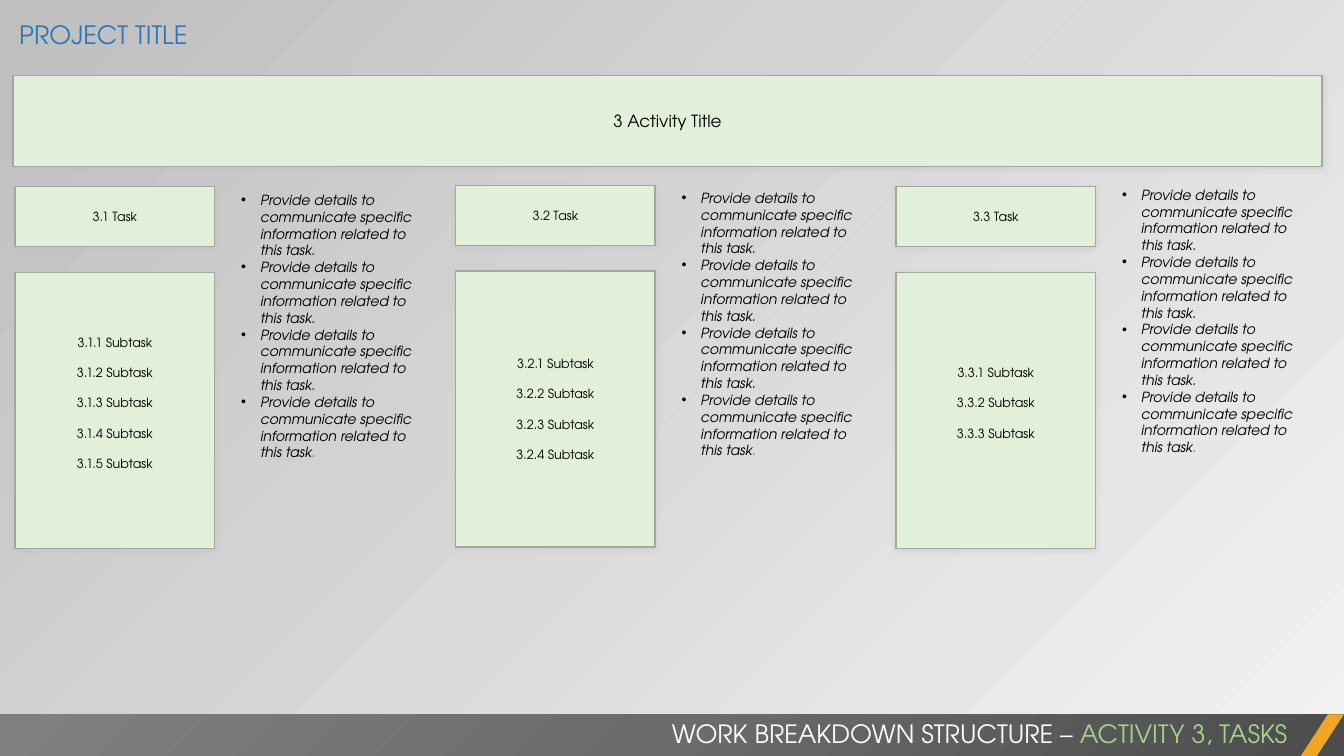
"""Build the work breakdown slide for the tasks of activity 3."""
from lxml import etree
from pptx import Presentation
from pptx.dml.color import RGBColor
from pptx.enum.shapes import MSO_SHAPE
from pptx.enum.text import MSO_ANCHOR, MSO_AUTO_SIZE, PP_ALIGN
from pptx.oxml import parse_xml
from pptx.oxml.ns import qn
from pptx.util import Cm, Pt

RECTANGLE, PARALLELOGRAM = MSO_SHAPE.RECTANGLE, MSO_SHAPE.PARALLELOGRAM
LEFT, CENTER, RIGHT = PP_ALIGN.LEFT, PP_ALIGN.CENTER, PP_ALIGN.RIGHT
TOP, MIDDLE = MSO_ANCHOR.TOP, MSO_ANCHOR.MIDDLE
GROW = MSO_AUTO_SIZE.SHAPE_TO_FIT_TEXT

BLACK = RGBColor(0x00, 0x00, 0x00)
WHITE = RGBColor(0xFF, 0xFF, 0xFF)
BLUE = RGBColor(0x2E, 0x75, 0xB6)
GREEN = RGBColor(0xA9, 0xD1, 0x8E)
PALE_GREEN = RGBColor(0xE2, 0xF0, 0xD9)
GRAY = RGBColor(0xA5, 0xA5, 0xA5)
AMBER = RGBColor(0xF0, 0xA6, 0x22)
LIGHT = RGBColor(0xF2, 0xF2, 0xF2)
SILVER = RGBColor(0xBF, 0xBF, 0xBF)
BAND_STOPS = [
    (0, RGBColor(0x4C, 0x4C, 0x4C)),
    (50, RGBColor(0x6B, 0x6B, 0x6B)),
    (100, RGBColor(0x80, 0x80, 0x80)),
]

DRAWING_NS = 'xmlns:a="http://schemas.openxmlformats.org/drawingml/2006/main"'
SHADOW = (
    f'<a:outerShdw {DRAWING_NS} blurRad="50800" dist="12700" dir="5400000">'
    f'<a:srgbClr val="{SILVER}"><a:alpha val="40000"/></a:srgbClr></a:outerShdw>'
)
DETAIL = "Provide details to communicate specific information related to this task"
DETAIL_COUNT = 4
TASKS = [
    {"subtasks": 5, "top": 4.7, "details_top": 4.7, "bottom_inset": 0.51},
    {"subtasks": 4, "top": 4.67, "details_top": 4.65, "bottom_inset": 0.13},
    {"subtasks": 3, "top": 4.7, "details_top": 4.57, "bottom_inset": 0.51},
]


def apply(target, values):
    """Set each named value on the target."""
    for name, value in values.items():
        setattr(target, name, value)


class BreakdownSlide:
    """Hold the shared style and draw elements on the current slide."""

    font = {"name": "TeX Gyre Adventor"}
    box_line = {"width": Pt(1)}
    grown = {"word_wrap": True, "auto_size": GROW, "vertical_anchor": TOP}

    def __init__(self, deck):
        """Add a title-only slide with a gradient background."""
        self.slide = deck.slides.add_slide(deck.slide_layouts[5])
        fill = self.slide.background.fill
        fill.gradient()
        fill.gradient_angle = 135
        for stop, color in zip(fill.gradient_stops, (LIGHT, SILVER)):
            stop.color.rgb = color

    def fill_text(self, frame, paragraphs, size, align=LEFT, italic=None, gap=0):
        """Fill a frame with paragraphs, each a list of text and colour pairs."""
        for index, runs in enumerate(paragraphs):
            paragraph = frame.add_paragraph() if index else frame.paragraphs[0]
            apply(paragraph, {"alignment": align, "space_before": Pt(gap if index else 0)})
            for text, color in runs:
                run = paragraph.add_run()
                run.text = text
                apply(run.font, {**self.font, "size": Pt(size), "italic": italic})
                run.font.color.rgb = color

    def title(self, text, place):
        """Place and format the title placeholder."""
        holder = self.slide.shapes.title
        apply(holder, dict(zip(("left", "top", "width", "height"), map(Cm, place))))
        apply(holder.text_frame, self.grown)
        self.fill_text(holder.text_frame, [[(text, BLUE)]], 18)

    def text(self, paragraphs, place, size, **style):
        """Add a wrapping text box and return its frame."""
        frame = self.slide.shapes.add_textbox(*map(Cm, place)).text_frame
        apply(frame, self.grown)
        self.fill_text(frame, paragraphs, size, **style)
        return frame

    def bullets(self, paragraphs, place, size):
        """Add an italic bulleted list."""
        frame = self.text(paragraphs, place, size, italic=True)
        for paragraph in frame.paragraphs:
            properties = paragraph._p.get_or_add_pPr()
            properties.set("marL", str(Cm(0.48)))
            properties.set("indent", str(-Cm(0.48)))
            etree.SubElement(properties, qn("a:buFont")).set("typeface", "Arial")
            etree.SubElement(properties, qn("a:buChar")).set("char", "•")

    def plain(self, kind, place, color):
        """Add a flat shape without an outline."""
        shape = self.slide.shapes.add_shape(kind, *map(Cm, place))
        shape.shadow.inherit = False
        shape.fill.solid()
        shape.fill.fore_color.rgb = color
        shape.line.fill.background()
        return shape

    def box(self, lines, place, size, bottom_inset=0.13):
        """Add a shadowed green box with centred lines."""
        shape = self.plain(RECTANGLE, place, PALE_GREEN)
        shape.line.color.rgb = GRAY
        apply(shape.line, self.box_line)
        shape._element.spPr.find(qn("a:effectLst")).append(parse_xml(SHADOW))
        frame = shape.text_frame
        apply(frame, {"word_wrap": True, "vertical_anchor": MIDDLE,
                      "margin_bottom": Cm(bottom_inset)})
        self.fill_text(frame, [[(line, BLACK)] for line in lines], size, CENTER, gap=10.8)

    def band(self, place):
        """Add the footer band with a radial gradient."""
        shape = self.plain(RECTANGLE, place, GRAY)
        stops = "".join(
            f'<a:gs pos="{position * 1000}"><a:srgbClr val="{color}"/></a:gs>'
            for position, color in BAND_STOPS
        )
        gradient = parse_xml(
            f'<a:gradFill {DRAWING_NS} rotWithShape="1"><a:gsLst>{stops}</a:gsLst>'
            '<a:path path="circle"><a:fillToRect l="100000" t="100000"/></a:path>'
            "</a:gradFill>"
        )
        properties = shape._element.spPr
        properties.replace(properties.find(qn("a:solidFill")), gradient)


def main():
    """Compose and save the slide."""
    deck = Presentation()
    apply(deck, {"slide_width": Cm(33.87), "slide_height": Cm(19.05)})
    page = BreakdownSlide(deck)
    page.title("PROJECT TITLE", (0.23, 0.36, 25.68, 1.02))
    page.box(["3 Activity Title"], (0.33, 1.9, 32.99, 2.29), 12)

    page.band((0, 18, 33.87, 1.07))
    slash = page.plain(PARALLELOGRAM, (32.77, 18, 1.1, 1.07), AMBER)
    slash.adjustments[0] = 0.65
    heading = [("WORK BREAKDOWN STRUCTURE – ", WHITE), ("ACTIVITY 3, TASKS", GREEN)]
    page.text([heading], (13.34, 17.98, 19.35, 1.02), 18, align=RIGHT)

    details = [[(DETAIL + ".", BLACK)]] * (DETAIL_COUNT - 1)
    details.append([(DETAIL, BLACK), (".", BLUE)])
    for number, task in enumerate(TASKS, 1):
        left = 0.38 + 11.1 * (number - 1)
        top = task["top"]
        subtasks = [f"3.{number}.{item} Subtask" for item in range(1, task["subtasks"] + 1)]
        page.box([f"3.{number} Task"], (left, top, 5.03, 1.52), 9)
        page.box(subtasks, (left, top + 2.16, 5.03, 6.96), 9, task["bottom_inset"])
        page.bullets(details, (left + 5.45, task["details_top"], 5.23, 7.62), 10)

    deck.save("out.pptx")


if __name__ == "__main__":
    main()
